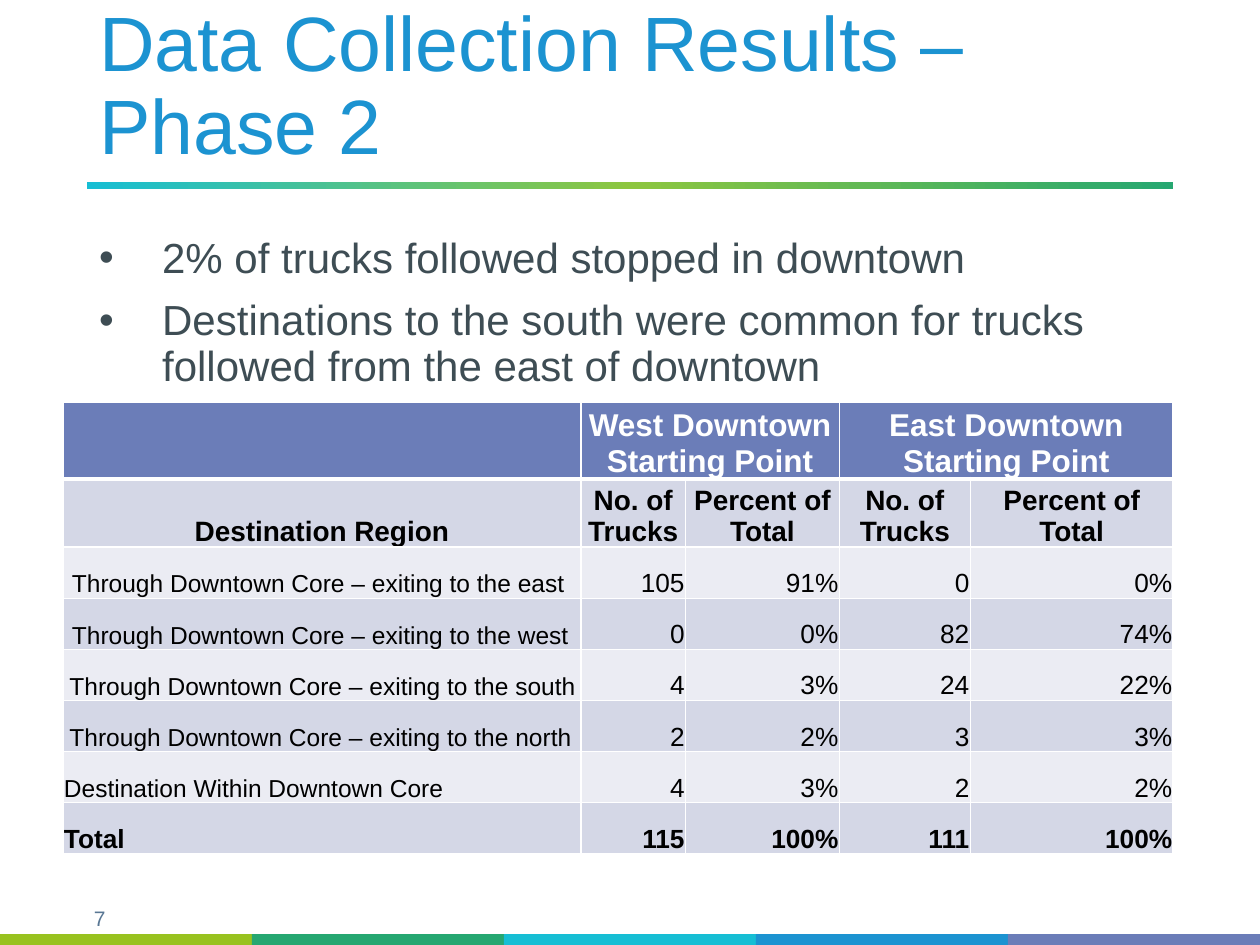
import copy

import lxml.etree
import pptx
import pptx.dml.color
import pptx.enum.shapes
import pptx.enum.text
import pptx.oxml.ns
import pptx.util
from pptx.util import Cm

ALIGN = pptx.enum.text.PP_ALIGN
ANCHOR = pptx.enum.text.MSO_ANCHOR
LIME, GREEN, CYAN, BLUE, INDIGO = "98C21F", "26A771", "16BED4", "1C93D1", "6B7DB8"
BAND_DARK, BAND_LIGHT = "D4D7E6", "EBECF3"

HEADINGS = ["Destination Region"] + ["No. of Trucks", "Percent of Total"] * 2
# Region, its left inset in cm, then trucks and share from the west and the east
DESTINATIONS = [
    ("Through Downtown Core – exiting to the east", 0.18, "105", "91%", "0", "0%"),
    ("Through Downtown Core – exiting to the west", 0.18, "0", "0%", "82", "74%"),
    ("Through Downtown Core – exiting to the south", 0.13, "4", "3%", "24", "22%"),
    ("Through Downtown Core – exiting to the north", 0.13, "2", "2%", "3", "3%"),
    ("Destination Within Downtown Core", 0.02, "4", "3%", "2", "2%"),
    ("Total", 0.02, "115", "100%", "111", "100%"),
]


def rgb(value):
    return pptx.dml.color.RGBColor.from_string(value)


def add_xml(parent, tag, **attributes):
    return lxml.etree.SubElement(parent, pptx.oxml.ns.qn(tag), attributes)


def apply(target, values):
    """Set every attribute named in values on target."""
    for name, value in values.items():
        setattr(target, name, value)


class SlideBuilder:
    font_name = "Arial"

    def __init__(self, slide):
        self.slide = slide

    def add_text(self, paragraph, text, size, color, bold=False, **layout):
        apply(paragraph, layout)
        run = paragraph.add_run()
        run.text = text
        apply(run.font, {"name": self.font_name, "size": pptx.util.Pt(size), "bold": bold})
        run.font.color.rgb = rgb(color)

    def text_frame(self, left, top, width, height, **frame_format):
        frame = self.slide.shapes.add_textbox(Cm(left), Cm(top), Cm(width), Cm(height)).text_frame
        apply(frame, {"word_wrap": True, **frame_format})
        return frame

    def bullets(self, frame, items, size, color):
        for index, item in enumerate(items):
            paragraph = frame.add_paragraph() if index else frame.paragraphs[0]
            properties = paragraph._p.get_or_add_pPr()
            properties.set("marL", str(Cm(1.27)))
            properties.set("indent", str(Cm(-1.27)))
            add_xml(properties, "a:buFont", typeface=self.font_name)
            add_xml(properties, "a:buChar", char="•")
            self.add_text(paragraph, item, size, color, line_spacing=0.9,
                          space_before=pptx.util.Pt(10 if index else 0))

    def bar(self, left, top, width, height, *colors):
        """Draw a rectangle in one colour, or in an even gradient of several."""
        bar = self.slide.shapes.add_shape(pptx.enum.shapes.MSO_SHAPE.RECTANGLE,
                                          Cm(left), Cm(top), Cm(width), Cm(height))
        bar.shadow.inherit = False
        bar.line.fill.background()
        if len(colors) == 1:
            bar.fill.solid()
            bar.fill.fore_color.rgb = rgb(colors[0])
            return
        bar.fill.gradient()
        bar.fill.gradient_angle = 0
        stop_list = bar.fill._fill._gradFill.gsLst
        while len(stop_list) < len(colors):
            stop_list.append(copy.deepcopy(stop_list[0]))
        for index, (stop, color) in enumerate(zip(bar.fill.gradient_stops, colors)):
            stop.color.rgb = rgb(color)
            stop.position = index / (len(colors) - 1)

    def table(self, left, top, column_widths, row_height, row_count):
        table = self.slide.shapes.add_table(
            row_count, len(column_widths), Cm(left), Cm(top),
            Cm(sum(column_widths)), Cm(row_height * row_count)).table
        for column, width in zip(table.columns, column_widths):
            column.width = Cm(width)
        return table

    def cell(self, cell, fill, text="", size=16, color="000000", bold=False,
             alignment=ALIGN.LEFT, inset=0.02, bottom_line=1):
        properties = cell._tc.get_or_add_tcPr()
        for side, weight in {"L": 1, "R": 1, "T": 1, "B": bottom_line}.items():
            line = add_xml(properties, f"a:ln{side}", w=str(pptx.util.Pt(weight)))
            add_xml(add_xml(line, "a:solidFill"), "a:srgbClr", val="FFFFFF")
        cell.fill.solid()
        cell.fill.fore_color.rgb = rgb(fill)
        apply(cell, {"vertical_anchor": ANCHOR.BOTTOM, "margin_left": Cm(inset),
                     "margin_right": Cm(0.02), "margin_top": Cm(0.02), "margin_bottom": 0})
        if text:
            self.add_text(cell.text_frame.paragraphs[0], text, size, color, bold,
                          alignment=alignment)


def fill_destination_table(builder):
    table = builder.table(1.27, 8.11, [10.44, 2.11, 3.1, 2.64, 4.09], 1.03,
                          len(DESTINATIONS) + 2)
    headers = ["", "West Downtown Starting Point", "", "East Downtown Starting Point", ""]
    for column, header in enumerate(headers):
        if header:
            table.cell(0, column).merge(table.cell(0, column + 1))
        builder.cell(table.cell(0, column), INDIGO, header, 18, "FFFFFF", True,
                     ALIGN.CENTER, bottom_line=3)
        builder.cell(table.cell(1, column), BAND_DARK, HEADINGS[column], bold=True,
                     alignment=ALIGN.CENTER)
    for row, (region, inset, *figures) in enumerate(DESTINATIONS, start=2):
        fill = BAND_DARK if row % 2 else BAND_LIGHT
        is_total = region == "Total"
        builder.cell(table.cell(row, 0), fill, region, 15 if is_total else 14,
                     bold=is_total, inset=inset)
        for column, figure in enumerate(figures, start=1):
            builder.cell(table.cell(row, column), fill, figure, 15, bold=is_total,
                         alignment=ALIGN.RIGHT)


def main():
    presentation = pptx.Presentation()
    apply(presentation, {"slide_width": Cm(25.4), "slide_height": Cm(19.05)})
    builder = SlideBuilder(presentation.slides.add_slide(presentation.slide_layouts[6]))

    page_number = builder.text_frame(1.4, 18.14, 1.22, 0.76)
    builder.add_text(page_number.paragraphs[0], "7", 12, "597794", alignment=ALIGN.CENTER)
    for index, color in enumerate([LIME, GREEN, CYAN, BLUE, INDIGO]):
        builder.bar(index * 5.08, 18.83, 5.08, 0.22, color)
    builder.bar(1.75, 3.67, 21.9, 0.14, CYAN, "8DC63F", GREEN)

    title = builder.text_frame(1.75, 0.28, 21.9, 3.3, vertical_anchor=ANCHOR.BOTTOM)
    builder.add_text(title.paragraphs[0], "Data Collection Results – Phase 2", 44, BLUE,
                     line_spacing=0.9)
    fill_destination_table(builder)
    findings = builder.text_frame(1.75, 4.65, 22.33, 12.5)
    builder.bullets(findings, [
        "2% of trucks followed stopped in downtown",
        "Destinations to the south were common for trucks followed from the east of downtown",
    ], 24, "3E4D54")
    presentation.save("out.pptx")


if __name__ == "__main__":
    main()
